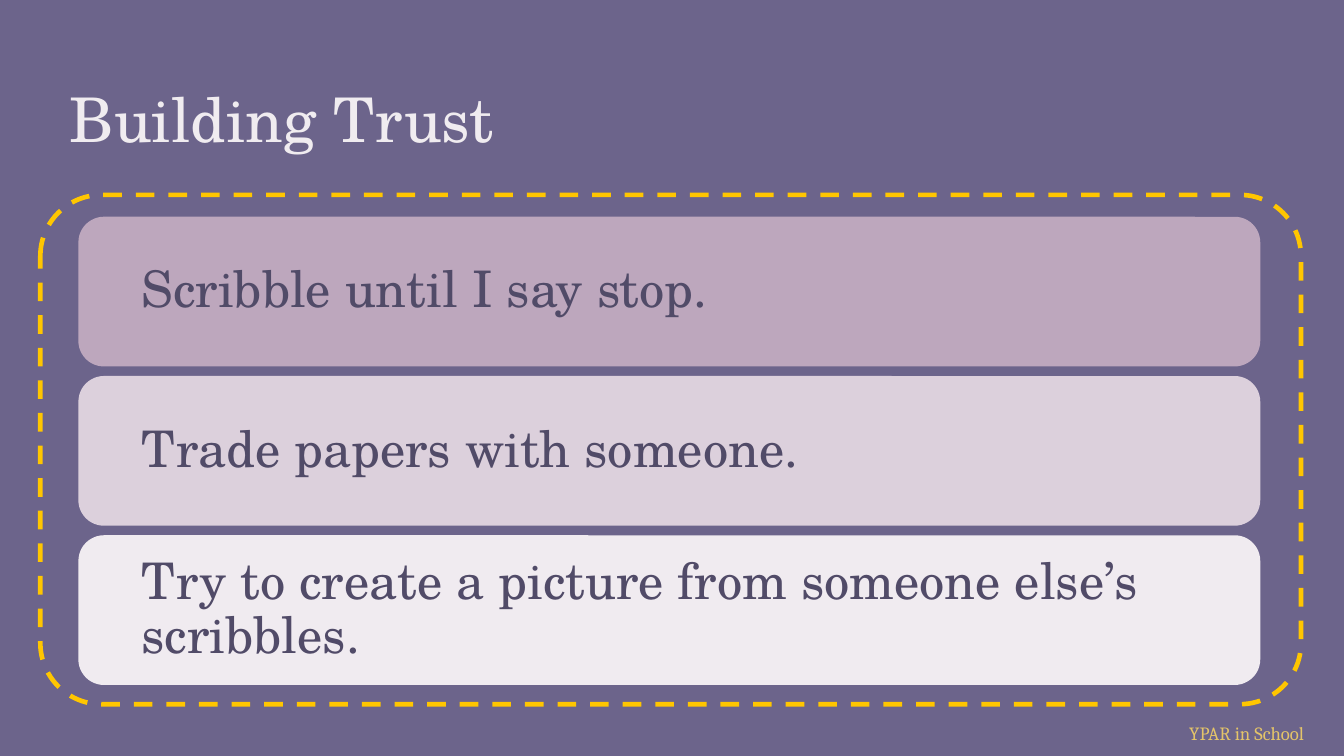
from pptx import Presentation
from pptx.dml.color import RGBColor
from pptx.enum import dml, shapes, text
from pptx.util import Inches, Pt

BACKGROUND = RGBColor(0x6C, 0x64, 0x8B)
TITLE_COLOR = RGBColor(0xF0, 0xEC, 0xF0)
CARD_TEXT = RGBColor(0x51, 0x4B, 0x68)
FOOTER_COLOR = RGBColor(0xE4, 0xC4, 0x69)
BORDER_COLOR = RGBColor(0xFF, 0xC6, 0x00)

STEPS = [
    ("Scribble until I say stop.", RGBColor(0xBD, 0xA7, 0xBD)),
    ("Trade papers with someone.", RGBColor(0xDC, 0xD0, 0xDC)),
    ("Try to create a picture from someone else’s scribbles.",
     RGBColor(0xF0, 0xEB, 0xF0)),
]
FIRST_TOP, LAST_TOP = 1.62, 3.99
CARD_PITCH = (LAST_TOP - FIRST_TOP) / (len(STEPS) - 1)

TITLE_FORMAT = {"name": "TeX Gyre Schola", "size": Pt(33), "color": TITLE_COLOR}
CARD_FORMAT = {"name": "TeX Gyre Schola", "size": Pt(27), "color": CARD_TEXT}
FOOTER_FORMAT = {"name": "Cambria", "size": Pt(10), "color": FOOTER_COLOR}


def write_text(shape, words, font_format, anchor, inset=0.1, wrap=True):
    """Fill the shape with one left-aligned paragraph and return it."""
    frame = shape.text_frame
    frame.auto_size = text.MSO_AUTO_SIZE.NONE
    frame.word_wrap = wrap
    frame.vertical_anchor = anchor
    for side in ("left", "top", "right", "bottom"):
        setattr(frame, f"margin_{side}", Inches(inset))
    paragraph = frame.paragraphs[0]
    paragraph.alignment = text.PP_ALIGN.LEFT
    run = paragraph.add_run()
    run.text = words
    for name, value in font_format.items():
        if name == "color":
            run.font.color.rgb = value
        else:
            setattr(run.font, name, value)
    return paragraph


def add_title(slide, words):
    title = slide.shapes.title
    box = {"left": 0.42, "top": 0.5, "width": 9.15, "height": 0.75}
    for name, value in box.items():
        setattr(title, name, Inches(value))
    write_text(title, words, TITLE_FORMAT, text.MSO_ANCHOR.BOTTOM)


def add_rounded_box(slide, left, top, width, height):
    shape = slide.shapes.add_shape(
        shapes.MSO_SHAPE.ROUNDED_RECTANGLE,
        Inches(left), Inches(top), Inches(width), Inches(height))
    shape.shadow.inherit = False
    return shape


def add_card(slide, top, words, color):
    card = add_rounded_box(slide, 0.59, top, 8.78, 1.1)
    card.fill.solid()
    card.fill.fore_color.rgb = color
    card.line.color.rgb = color
    card.line.width = Pt(1)
    paragraph = write_text(card, words, CARD_FORMAT, text.MSO_ANCHOR.MIDDLE, 0.11)
    paragraph.line_spacing = 0.9
    properties = paragraph._p.get_or_add_pPr()
    properties.set("marL", str(Inches(0.3)))
    properties.set("indent", "0")


def add_dashed_border(slide):
    border = add_rounded_box(slide, 0.3, 1.45, 9.38, 3.79)
    border.adjustments[0] = 0.12
    border.fill.background()
    border.line.color.rgb = BORDER_COLOR
    border.line.width = Pt(2.5)
    border.line.dash_style = dml.MSO_LINE.DASH


def add_footer(slide, words):
    footer = slide.shapes.add_textbox(
        Inches(8.75), Inches(5.32), Inches(1.05), Inches(0.27))
    write_text(footer, words, FOOTER_FORMAT, text.MSO_ANCHOR.MIDDLE, wrap=False)


def main():
    presentation = Presentation()
    presentation.slide_width = Inches(10)
    presentation.slide_height = Inches(10 * 9 / 16)
    slide = presentation.slides.add_slide(presentation.slide_layouts[5])
    slide.background.fill.solid()
    slide.background.fill.fore_color.rgb = BACKGROUND

    add_footer(slide, "YPAR in School")
    add_title(slide, "Building Trust")
    for index, (words, color) in enumerate(STEPS):
        add_card(slide, FIRST_TOP + index * CARD_PITCH, words, color)
    add_dashed_border(slide)
    presentation.save("out.pptx")


if __name__ == "__main__":
    main()
